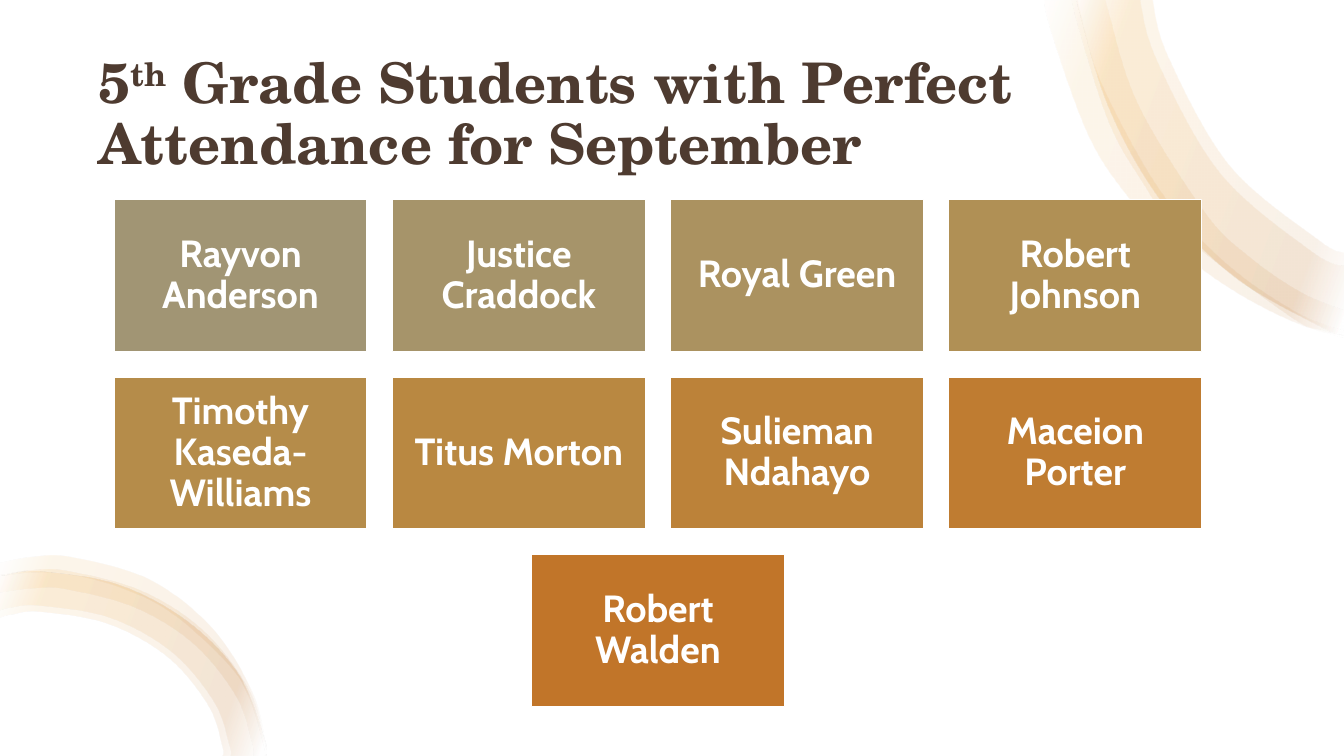
"""Build the September perfect attendance slide."""
from lxml.etree import SubElement
from pptx import Presentation
from pptx.dml.color import RGBColor
from pptx.enum.shapes import MSO_SHAPE
from pptx.enum.text import MSO_ANCHOR, MSO_AUTO_SIZE, PP_ALIGN
from pptx.oxml.ns import qn
from pptx.util import Inches, Pt

COLORS = {"white": "FFFFFF", "title": "4E3B30", "rust": "C17529", "gold": "F0A22E"}
TITLE = [("5", 0), ("th", 30000), (" Grade Students with Perfect Attendance for September", 0)]
STUDENTS = [
    ("Rayvon Anderson", "A19574"), ("Justice Craddock", "A6946A"),
    ("Royal Green", "AB9260"), ("Robert Johnson", "B09055"),
    ("Timothy Kaseda-Williams", "B58C4A"), ("Titus Morton", "B98841"),
    ("Sulieman Ndahayo", "BC8239"), ("Maceion Porter", "BF7C31"),
    ("Robert Walden", "C17529"),
]
SLIDE_W, SLIDE_H = Inches(13.33), Inches(7.5)
COLS, LEFT, TOP, CARD_W, CARD_H, GAP = 4, 1.13, 1.98, 2.51, 1.51, 0.25
TITLE_FONT = {"name": "TeX Gyre Schola", "size": Pt(40), "bold": True}
CARD_FONT = {"name": "Cabin", "size": Pt(27), "bold": True}
MARGINS = ("margin_left", "margin_right", "margin_top", "margin_bottom")
STOPS = [(2, "white"), (16, "rust"), (85, "gold"), (100, "white")]
UNITS = 1000

TOP_OUTER = [(13.33, 3.32), (13.09, 3.24), (12.23, 2.74), (11.52, 2), (11, 1.07),
             (10.69, 0.04), (10.67, -0.09)]
LOW_OUTER = [(2.63, 7.5), (2.62, 7.35), (2.36, 6.69), (1.85, 6.16), (1.17, 5.8),
             (0.4, 5.67), (0.04, 5.71), (0, 5.72)]
RIBBONS = [
    ([(13.33, 3.35), (12.82, 3.19), (12.21, 2.87), (11.65, 2.45), (11.16, 1.92),
      (10.78, 1.31), (10.41, 0.26), (10.36, -0.09)],
     [(10.68, -0.09), (10.73, 0.19), (10.93, 0.84), (11.4, 1.73), (11.81, 2.27),
      (12.3, 2.73), (12.86, 3.1), (13.17, 3.23), (13.33, 3.28)]),
    (TOP_OUTER,
     [(11.41, -0.09), (11.42, -0.06), (11.58, 0.55), (12.19, 1.64), (13.07, 2.38),
      (13.33, 2.51)]),
    ([(13.33, 3.33), (13.1, 3.27), (12.79, 3.14), (11.73, 2.33), (11.32, 1.79),
      (10.99, 1.19), (10.68, 0.2), (10.63, -0.09)],
     [(10.96, -0.09), (11, 0.13), (11.29, 1.04), (11.95, 2.11), (12.39, 2.55),
      (12.9, 2.9), (13.33, 3.08)]),
    (TOP_OUTER,
     [(11.29, -0.09), (11.3, -0.04), (11.47, 0.59), (12.1, 1.72), (13.01, 2.5),
      (13.33, 2.64)]),
    (LOW_OUTER,
     [(0, 6.13), (0.11, 6.1), (0.4, 6.07), (1.07, 6.19), (1.66, 6.52), (2.06, 7),
      (2.2, 7.41), (2.2, 7.5)]),
    (LOW_OUTER,
     [(0, 6.06), (0.1, 6.03), (0.4, 6.01), (1.09, 6.13), (1.7, 6.47), (2.12, 6.97),
      (2.27, 7.4), (2.28, 7.5)]),
    ([(2.63, 7.5), (2.62, 7.36), (2.47, 6.85), (2.03, 6.27), (1.42, 5.87),
      (0.69, 5.67), (0.31, 5.66), (0, 5.71)],
     [(0, 5.88), (0.33, 5.84), (0.67, 5.85), (1.34, 6.03), (1.92, 6.39),
      (2.34, 6.91), (2.5, 7.38), (2.51, 7.5)]),
    ([(2.64, 7.5), (2.63, 7.4), (2.5, 6.87), (2.1, 6.23), (1.48, 5.75),
      (0.71, 5.53), (0.31, 5.53), (0, 5.59)],
     [(0, 5.72), (0.32, 5.68), (0.69, 5.7), (1.22, 5.84), (1.71, 6.09),
      (2.25, 6.58), (2.47, 6.93), (2.61, 7.4), (2.62, 7.5)]),
]


def rgb(value):
    return RGBColor.from_string(value)


def apply(obj, values):
    for key, value in values.items():
        setattr(obj, key, value)


def curve_edges(sp, split):
    """Turn straight segments into curves, keeping the one at the split."""
    outline = next(sp._element.iter(qn("a:path")))
    pts = [(int(pt.get("x")), int(pt.get("y"))) for pt in outline.iter(qn("a:pt"))]
    edges = pts[:split], pts[split:]
    lines = outline.findall(qn("a:lnTo"))
    for edge, segments in zip(edges, (lines[:split - 1], lines[split:])):
        knots = [edge[0], *edge, edge[-1]]
        for i, line in enumerate(segments):
            a, b, c, d = knots[i:i + 4]
            first = [q + (r - p) / 6 for p, q, r in zip(a, b, c)]
            second = [r - (s - q) / 6 for q, r, s in zip(b, c, d)]
            curve = SubElement(outline, qn("a:cubicBezTo"))
            for x, y in (first, second, c):
                SubElement(curve, qn("a:pt"), x=str(round(x)), y=str(round(y)))
            outline.replace(line, curve)


def add_ribbon(shapes, outer, inner):
    pts = [(x * UNITS, y * UNITS) for x, y in outer + inner]
    builder = shapes.build_freeform(*pts[0], scale=Inches(1) / UNITS)
    builder.add_line_segments(pts[1:], close=True)
    sp = builder.convert_to_shape()
    curve_edges(sp, len(outer))
    sp.shadow.inherit = False
    sp.line.fill.background()
    sp.fill.gradient()
    sp.fill.gradient_angle = 160
    stops = sp._element.spPr.find(qn("a:gradFill")).find(qn("a:gsLst"))
    stops.clear()
    for pos, name in STOPS:
        stop = SubElement(stops, qn("a:gs"), pos=str(pos * 1000))
        color = SubElement(stop, qn("a:srgbClr"), val=COLORS[name])
        SubElement(color, qn("a:alpha"), val="10000")


def add_rect(shapes, box, fill):
    sp = shapes.add_shape(MSO_SHAPE.RECTANGLE, *box)
    sp.shadow.inherit = False
    sp.fill.solid()
    sp.fill.fore_color.rgb = rgb(fill)
    return sp


def add_backdrop(shapes):
    sp = add_rect(shapes, (0, 0, SLIDE_W, SLIDE_H), COLORS["white"])
    sp.line.fill.background()
    shapes.title._element.addprevious(sp._element)


def add_title(title):
    apply(title, {"left": Inches(0.88), "top": Inches(0.5),
                  "width": Inches(11.57), "height": Inches(1.3)})
    tf = title.text_frame
    apply(tf, {"word_wrap": True, "auto_size": MSO_AUTO_SIZE.NONE,
               "vertical_anchor": MSO_ANCHOR.MIDDLE})
    p = tf.paragraphs[0]
    apply(p, {"alignment": PP_ALIGN.LEFT, "line_spacing": 0.9})
    for text, baseline in TITLE:
        r = p.add_run()
        r.text = text
        apply(r.font, TITLE_FONT)
        r.font.color.rgb = rgb(COLORS["title"])
        if baseline:
            r._r.get_or_add_rPr().set("baseline", str(baseline))


def add_card(shapes, index, name, fill):
    row, col = divmod(index, COLS)
    in_row = min(COLS, len(STUDENTS) - row * COLS)
    x = LEFT + (col + (COLS - in_row) / 2) * (CARD_W + GAP)
    y = TOP + row * (CARD_H + GAP)
    sp = add_rect(shapes, [Inches(n) for n in (x, y, CARD_W, CARD_H)], fill)
    sp.line.color.rgb = rgb(COLORS["white"])
    sp.line.width = Pt(1)
    tf = sp.text_frame
    apply(tf, {"word_wrap": True, "vertical_anchor": MSO_ANCHOR.MIDDLE})
    apply(tf, dict.fromkeys(MARGINS, Inches(0.11)))
    p = tf.paragraphs[0]
    apply(p, {"alignment": PP_ALIGN.CENTER, "line_spacing": 0.9})
    r = p.add_run()
    r.text = name
    apply(r.font, CARD_FONT)
    r.font.color.rgb = rgb(COLORS["white"])


def main():
    prs = Presentation()
    apply(prs, {"slide_width": SLIDE_W, "slide_height": SLIDE_H})
    slide = prs.slides.add_slide(prs.slide_layouts[5])
    slide.background.fill.solid()
    slide.background.fill.fore_color.rgb = rgb(COLORS["white"])
    add_backdrop(slide.shapes)
    add_title(slide.shapes.title)
    for outer, inner in RIBBONS:
        add_ribbon(slide.shapes, outer, inner)
    for index, (name, fill) in enumerate(STUDENTS):
        add_card(slide.shapes, index, name, fill)
    prs.save("out.pptx")


if __name__ == "__main__":
    main()
